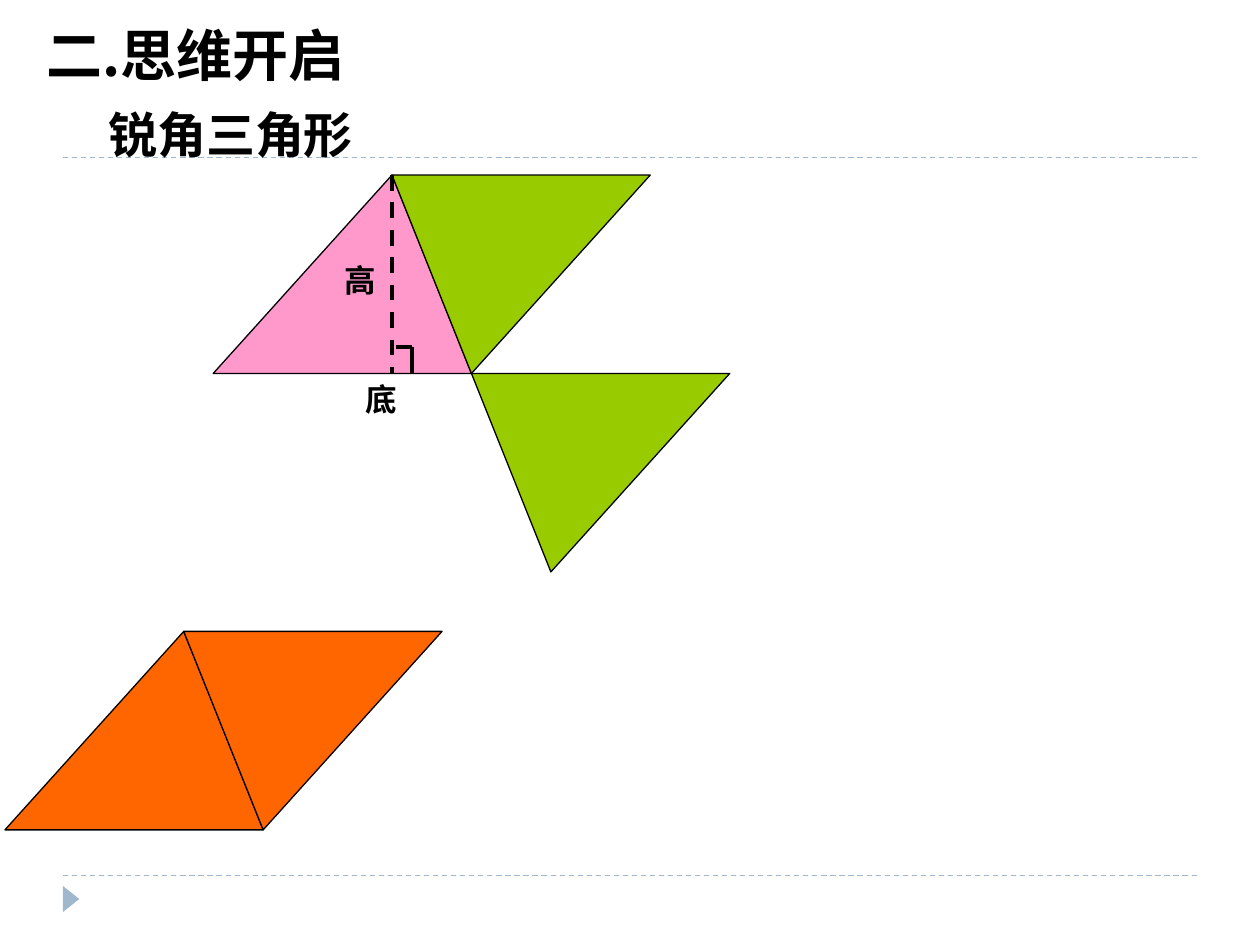
from pptx import Presentation
from pptx.dml.color import RGBColor
from pptx.enum.dml import MSO_LINE
from pptx.enum.shapes import MSO_CONNECTOR, MSO_SHAPE
from pptx.enum.text import MSO_ANCHOR, PP_ALIGN
from pptx.oxml import parse_xml
from pptx.oxml.ns import nsdecls, qn
from pptx.util import Pt

BLACK, STEEL = "000000", "9FB8CD"
GREEN, PINK, ORANGE = "99CC00", "FF99CC", "FF6600"
WIDE, HIGH, FOOT = 147.6, 113.4, 102.2


def paint(form, hue):
    """Set a fill, line or font colour from a hex string."""
    if hasattr(form, "solid"):
        form.solid()
        form.fore_color.rgb = RGBColor.from_string(hue)
    else:
        form.color.rgb = RGBColor.from_string(hue)


def add_line(slide, x1, y1, x2, y2, hue=BLACK, width=2.25, dash=False):
    """Draw a straight line."""
    line = slide.shapes.add_connector(
        MSO_CONNECTOR.STRAIGHT, Pt(x1), Pt(y1), Pt(x2), Pt(y2))
    paint(line.line, hue)
    line.line.width = Pt(width)
    if dash:
        line.line.dash_style = MSO_LINE.DASH
    line._element.spPr.append(parse_xml(f"<a:effectLst {nsdecls('a')}/>"))


def add_text(slide, text, box, size, font="Arial",
             align=PP_ALIGN.LEFT, anchor=MSO_ANCHOR.TOP):
    """Write one bold line in a box."""
    frame = slide.shapes.add_textbox(*map(Pt, box)).text_frame
    frame.word_wrap = True
    frame.vertical_anchor = anchor
    frame.text = text
    para = frame.paragraphs[0]
    para.alignment = align
    run = para.runs[0]
    run.font.size, run.font.bold, run.font.name = Pt(size), True, font
    paint(run.font, BLACK)
    east = run.font._element.makeelement(
        qn("a:ea"), {"typeface": "Noto Sans CJK SC"})
    run.font._element.find(qn("a:latin")).addnext(east)


def add_tri(slide, x, y, hue, turned=False):
    """Draw the acute triangle, upright or turned half round, in its box."""
    dots = [(FOOT, 0), (0, HIGH), (WIDE, HIGH)]
    if turned:
        dots = [(WIDE - a, HIGH - b) for a, b in dots]
    dots = [(Pt(x + a), Pt(y + b)) for a, b in dots]
    path = slide.shapes.build_freeform(*dots[0])
    path.add_line_segments(dots[1:], close=True)
    tri = path.convert_to_shape()
    tri.shadow.inherit = False
    paint(tri.fill, hue)
    paint(tri.line, BLACK)
    tri.line.width = Pt(0.75)


def add_pair(slide, x, y, left, right):
    """Join two triangles into a parallelogram."""
    add_tri(slide, x, y, left)
    add_tri(slide, x + FOOT, y, right, True)


def add_marks(slide, x, y):
    """Mark the height, right angle and base of a triangle."""
    top, base = x + FOOT, y + HIGH
    add_line(slide, top, y, top, base, dash=True)
    add_line(slide, top + 2.5, base - 15, top + 11.5, base - 15)
    add_line(slide, top + 11.5, base - 15, top + 11.5, base)
    add_text(slide, "底", (top - 22.4, base, 25, 29), 18)
    add_text(slide, "高", (top - 34, y + 45.4, 20, 29), 18)


def add_frame(slide, x, wide):
    """Draw the two rules and the corner arrow."""
    for y in (500.4, 90):
        add_line(slide, x, y, x + wide, y, STEEL, 0.75, True)
    mark = slide.shapes.add_shape(
        MSO_SHAPE.ISOSCELES_TRIANGLE, Pt(x - 2.9), Pt(509), Pt(15), Pt(9.4))
    mark.rotation = 90
    mark.shadow.inherit = False
    paint(mark.fill, STEEL)
    mark.line.fill.background()


def add_heads(slide, x, y):
    """Write the title and the subtitle."""
    add_text(slide, "锐角三角形", (x + 14.4, y + 56.2, 196, 41), 28,
             align=PP_ALIGN.CENTER)
    add_text(slide, "二.思维开启", (x, y, 209.5, 62), 32, "Noto Sans CJK SC",
             anchor=MSO_ANCHOR.MIDDLE)


def main():
    """Build the slide and save it."""
    deck = Presentation()
    deck.slide_width, deck.slide_height = Pt(720), Pt(540)
    slide = deck.slides.add_slide(deck.slide_layouts[6])
    x, y = 121.8, 100
    add_frame(slide, 36, 648)
    add_tri(slide, x + WIDE, y + HIGH, GREEN, True)
    add_pair(slide, x, y, PINK, GREEN)
    add_pair(slide, 2.8, 360.8, ORANGE, ORANGE)
    add_marks(slide, x, y)
    add_heads(slide, 19.4, 0)
    deck.save("out.pptx")


if __name__ == "__main__":
    main()
